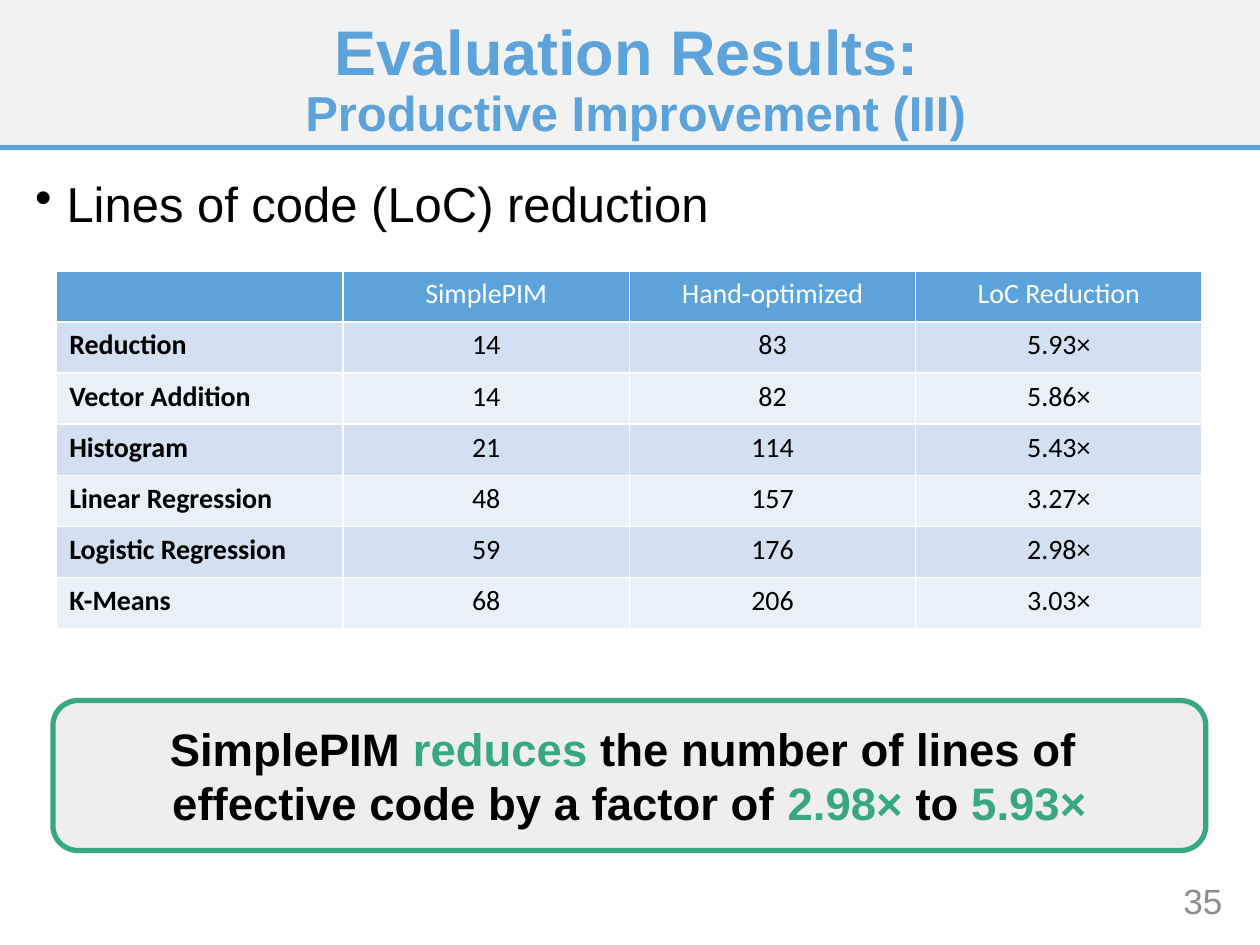
"""Build the slide on lines of code saved by SimplePIM."""
from lxml import etree
from pptx import Presentation
from pptx.dml.color import RGBColor
from pptx.enum.shapes import MSO_CONNECTOR, MSO_SHAPE
from pptx.enum.text import MSO_ANCHOR, PP_ALIGN
from pptx.oxml.ns import qn
from pptx.util import Inches, Pt

LEFT, MID, RIGHT = PP_ALIGN.LEFT, PP_ALIGN.CENTER, PP_ALIGN.RIGHT
TOP, CENTER = MSO_ANCHOR.TOP, MSO_ANCHOR.MIDDLE
RECT, ROUND = MSO_SHAPE.RECTANGLE, MSO_SHAPE.ROUNDED_RECTANGLE
STRAIGHT = MSO_CONNECTOR.STRAIGHT

THEME = {
    "blue": "5CA2DB", "green": "38A881", "black": "000000", "white": "FFFFFF",
    "gray": "8C8C8C", "band": "F2F2F2", "box": "EEEEEE",
    "odd": "D2E0F1", "even": "EAF0F8",
    "text": "Arial", "grid": "Calibri",
    "title": 36, "sub": 28, "body": 28, "claim": 26, "page": 20, "cell": 16,
}

TITLE = [[("Evaluation Results: ", "blue", "title")],
         [("Productive Improvement (III)", "blue", "sub")]]
POINT = [[("Lines of code (LoC) reduction", "black", "body")]]
PAGE = [[("35", "gray", "page")]]
CLAIM = [
    [("SimplePIM ", "black", "claim"), ("reduces", "green", "claim"),
     (" the number of lines of ", "black", "claim")],
    [("effective code by a factor of ", "black", "claim"),
     ("2.98× ", "green", "claim"), ("to ", "black", "claim"),
     ("5.93×", "green", "claim")],
]
ROWS = [
    ("", "SimplePIM", "Hand-optimized", "LoC Reduction"),
    ("Reduction", "14", "83", "5.93×"),
    ("Vector Addition", "14", "82", "5.86×"),
    ("Histogram", "21", "114", "5.43×"),
    ("Linear Regression", "48", "157", "3.27×"),
    ("Logistic Regression", "59", "176", "2.98×"),
    ("K-Means", "68", "206", "3.03×"),
]


def color(name):
    """Return a theme colour."""
    return RGBColor.from_string(THEME[name])


def write(frame, lines, align, bold=False, anchor=CENTER):
    """Fill a frame with one paragraph of coloured runs and line breaks."""
    frame.word_wrap = True
    frame.vertical_anchor = anchor
    para = frame.paragraphs[0]
    para.alignment = align
    for num, line in enumerate(lines):
        if num:
            para.add_line_break()
        for text, tint, size in line:
            run = para.add_run()
            run.text = text
            run.font.size = Pt(THEME[size])
            run.font.color.rgb = color(tint)
    para.font.name = THEME["text"]
    para.font.bold = bold
    return para


def add_text(slide, area, *args, **keys):
    """Add a text box and return its paragraph."""
    box = slide.shapes.add_textbox(*map(Inches, area))
    return write(box.text_frame, *args, **keys)


def add_box(slide, kind, area, fill, edge=None):
    """Add a flat filled shape."""
    box = slide.shapes.add_shape(kind, *map(Inches, area))
    box.shadow.inherit = False
    box.fill.solid()
    box.fill.fore_color.rgb = color(fill)
    if edge:
        box.line.color.rgb = color(edge)
        box.line.width = Pt(3)
    else:
        box.line.fill.background()
    return box


def add_rule(slide, top):
    """Draw the line under the title band."""
    rule = slide.shapes.add_connector(
        STRAIGHT, 0, Inches(top), Inches(10), Inches(top))
    rule.line.color.rgb = color("blue")
    rule.line.width = Pt(3)
    etree.SubElement(rule.element.spPr, qn("a:effectLst"))


def add_bullet(para):
    """Give a paragraph a hanging bullet."""
    props = para._p.get_or_add_pPr()
    props.set("marL", str(Inches(0.25)))
    props.set("indent", str(-Inches(0.25)))
    mark = etree.Element(qn("a:buChar"), char="•")
    props.insert_element_before(mark, "a:tabLst", "a:defRPr", "a:extLst")


def add_edges(cell):
    """Draw white borders around a cell."""
    props = cell._tc.get_or_add_tcPr()
    for num, side in enumerate(("lnL", "lnR", "lnT", "lnB")):
        edge = etree.Element(qn("a:" + side), w=str(Pt(1)))
        fill = etree.SubElement(edge, qn("a:solidFill"))
        etree.SubElement(fill, qn("a:srgbClr"), val=THEME["white"])
        props.insert(num, edge)


def add_grid(slide, area):
    """Add the table of line counts."""
    grid = slide.shapes.add_table(
        len(ROWS), len(ROWS[0]), *map(Inches, area)).table
    for row, words in enumerate(ROWS):
        fill = ("odd" if row % 2 else "even") if row else "blue"
        for col, word in enumerate(words):
            cell = grid.cell(row, col)
            cell.fill.solid()
            cell.fill.fore_color.rgb = color(fill)
            add_edges(cell)
            para = cell.text_frame.paragraphs[0]
            para.text = word
            para.alignment = MID if col else LEFT
            para.font.name = THEME["grid"]
            para.font.size = Pt(THEME["cell"])
            para.font.bold = row > 0 and col == 0
            para.font.color.rgb = color("black" if row else "white")


def main():
    """Place every part and save the deck."""
    deck = Presentation()
    deck.slide_width, deck.slide_height = Inches(10), Inches(7.5)
    slide = deck.slides.add_slide(deck.slide_layouts[6])
    add_box(slide, RECT, (0, 0, 10, 1.17), "band")
    add_text(slide, (8.72, 6.95, 1.08, 0.4), PAGE, RIGHT)
    add_rule(slide, 1.17)
    point = add_text(slide, (0.18, 1.38, 9.53, 0.6), POINT, LEFT, anchor=TOP)
    point.line_spacing = 0.9
    add_bullet(point)
    add_grid(slide, (0.45, 2.15, 9.09, 2.84))
    claim = add_box(slide, ROUND, (0.42, 5.56, 9.15, 1.19), "box", "green")
    write(claim.text_frame, CLAIM, MID, bold=True)
    title = add_text(slide, (0.18, 0.14, 9.73, 1.01), TITLE, MID, bold=True)
    title.line_spacing = 0.9
    deck.save("out.pptx")


if __name__ == "__main__":
    main()
